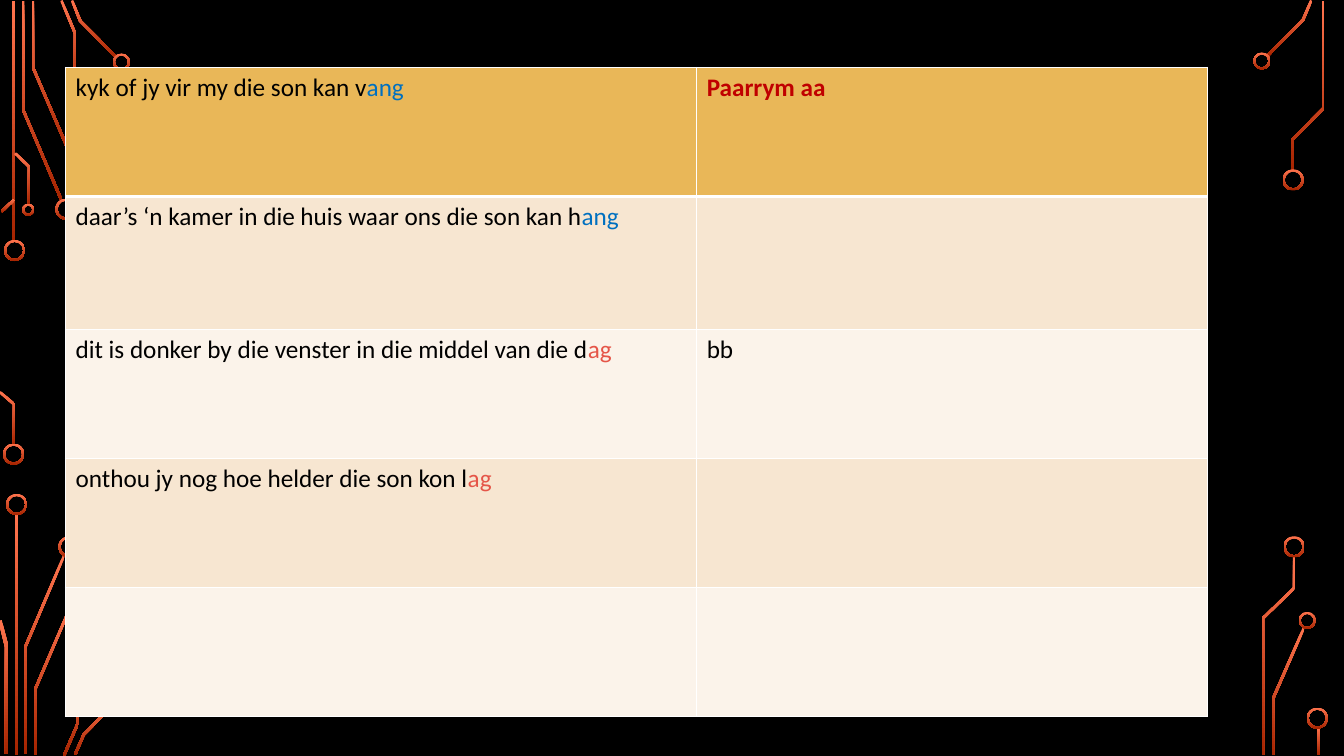
from dataclasses import dataclass
from math import hypot

from lxml.etree import SubElement
from pptx import Presentation
from pptx.dml.color import RGBColor as RGB
from pptx.enum.shapes import MSO_SHAPE as SHAPE
from pptx.oxml.ns import qn
from pptx.util import Inches, Pt

# Grid: every length is a number of columns or rows of this size
COLS, ROWS = 1333, 750
CELL = Inches(0.01)


def grid(n: float) -> int:
    return round(n * CELL)


@dataclass(frozen=True)
class Theme:
    background: str = "000000"
    circuit_top: str = "FF744E"
    circuit_bottom: str = "A62400"
    header: str = "E9B758"
    bands: tuple = ("FBF3EA", "F7E6D1")
    border: str = "FFFFFF"
    text: str = "000000"
    rhyme_a: str = "0070C0"
    rhyme_b: str = "E55548"
    label: str = "C00000"
    font: str = "Calibri"
    size: int = 18
    thin: int = 1
    thick: int = 3


THEME = Theme()


@dataclass(frozen=True)
class Ring:
    x: float
    y: float
    size: float = 21


@dataclass(frozen=True)
class Bar:
    x: float
    y: float
    height: float
    width: float = 3


@dataclass(frozen=True)
class Trace:
    points: tuple
    width: float = 2.5


@dataclass(frozen=True)
class Phrase:
    stem: str = ""
    rhyme: str = ""
    rhyme_colour: str = THEME.text
    colour: str = THEME.text
    bold: bool = False


# Circuit pattern along both edges
BARS = [Bar(12, 1, 239), Bar(15, 510, 239), Bar(1306, 721, 28)]
RINGS = [
    Ring(4, 238), Ring(3, 440), Ring(55, 197), Ring(64, 155), Ring(64, 99),
    Ring(112, 53, 17), Ring(22, 202, 12), Ring(6, 490), Ring(58, 532),
    Ring(67, 574), Ring(67, 630), Ring(115, 680, 17), Ring(1243, 52, 17),
    Ring(1272, 168), Ring(1288, 607, 17), Ring(1273, 532), Ring(1296, 702),
]
TRACES = [
    Trace(((23, 1), (23, 109), (61, 198.5))),
    Trace(((32.5, 1), (32.5, 66.5), (71, 156.5))),
    Trace(((61, 0.5), (74.5, 33), (74.5, 100))),
    Trace(((71.5, 0.5), (79.5, 20.5), (115.5, 57))),
    Trace(((14, 198), (1.5, 210))),
    Trace(((0, 389), (14, 401), (14, 441))),
    Trace(((15, 152), (29, 165.5), (29, 203))),
    Trace(((25.5, 748), (25.5, 641), (63.5, 551.5))),
    Trace(((0, 615.5), (6.5, 641), (6.5, 748)), 3.5),
    Trace(((35.5, 749), (35.5, 682.5), (73.5, 593.5))),
    Trace(((63.5, 749.5), (77.5, 717), (77.5, 650))),
    Trace(((74.5, 748.5), (83, 729), (118, 693))),
    Trace(((1257, 55.5), (1292.5, 19.5), (1300.5, 0.5))),
    Trace(((1262.5, 749), (1262.5, 693.5), (1293, 623.5))),
    Trace(((1282, 169), (1282, 138.5), (1312.5, 107.5), (1312.5, 1))),
    Trace(((1252.5, 749), (1252.5, 613.5), (1283.5, 583.5), (1283.5, 552))),
]

# Poem table
TABLE_LEFT, TABLE_TOP = 65, 67
COL_WIDTHS = (626, 507)
ROW_HEIGHTS = (128, 132, 128, 128, 128)
POEM = [
    (Phrase("kyk of jy vir my die son kan v", "ang", THEME.rhyme_a),
     Phrase("Paarrym aa", colour=THEME.label, bold=True)),
    (Phrase("daar’s ‘n kamer in die huis waar ons die son kan h", "ang", THEME.rhyme_a),
     Phrase()),
    (Phrase("dit is donker by die venster in die middel van die d", "ag", THEME.rhyme_b),
     Phrase("bb")),
    (Phrase("onthou jy nog hoe helder die son kon l", "ag", THEME.rhyme_b), Phrase()),
    (Phrase(), Phrase()),
]


def paint_circuit(sp) -> None:
    sp.shadow.inherit = False
    sp.line.fill.background()
    sp.fill.gradient()
    sp.fill.gradient_angle = 270
    top, bottom = sp.fill.gradient_stops
    top.position, bottom.position = 0, 1
    top.color.rgb = RGB.from_string(THEME.circuit_top)
    bottom.color.rgb = RGB.from_string(THEME.circuit_bottom)


def draw_bar(shapes, bar: Bar) -> None:
    box = map(grid, (bar.x, bar.y, bar.width, bar.height))
    paint_circuit(shapes.add_shape(SHAPE.RECTANGLE, *box))


def draw_ring(shapes, ring: Ring) -> None:
    box = map(grid, (ring.x, ring.y, ring.size, ring.size))
    sp = shapes.add_shape(SHAPE.DONUT, *box)
    sp.adjustments[0] = 2 / ring.size
    paint_circuit(sp)


def trace_side(points: tuple, offset: float) -> list:
    """Shift a polyline sideways, with mitred corners."""
    normals = []
    for (x0, y0), (x1, y1) in zip(points, points[1:]):
        length = hypot(x1 - x0, y1 - y0)
        normals.append(((y0 - y1) / length, (x1 - x0) / length))
    before, after = normals[:1] + normals, normals + normals[-1:]
    side = []
    for (x, y), (ax, ay), (bx, by) in zip(points, before, after):
        k = offset / (1 + ax * bx + ay * by)
        side.append((grid(x + k * (ax + bx)), grid(y + k * (ay + by))))
    return side


def draw_trace(shapes, trace: Trace) -> None:
    half = trace.width / 2
    outline = trace_side(trace.points, half) + trace_side(trace.points, -half)[::-1]
    builder = shapes.build_freeform(*outline[0])
    builder.add_line_segments(outline[1:], close=True)
    paint_circuit(builder.convert_to_shape())


def set_borders(cell, top: int, bottom: int) -> None:
    tc_pr = cell._tc.get_or_add_tcPr()
    widths = {"lnL": THEME.thin, "lnR": THEME.thin, "lnT": top, "lnB": bottom}
    for i, (tag, width) in enumerate(widths.items()):
        ln = SubElement(tc_pr, qn(f"a:{tag}"), w=str(Pt(width)))
        fill = SubElement(ln, qn("a:solidFill"))
        SubElement(fill, qn("a:srgbClr"), val=THEME.border)
        tc_pr.insert(i, ln)


def format_run(r, colour: str, bold: bool) -> None:
    r.font.name, r.font.size, r.font.bold = THEME.font, Pt(THEME.size), bold
    r.font.color.rgb = RGB.from_string(colour)


def write_phrase(cell, phrase: Phrase) -> None:
    p = cell.text_frame.paragraphs[0]
    p.font.size = Pt(THEME.size)
    p.text = phrase.stem
    for r in p.runs:
        format_run(r, phrase.colour, phrase.bold)
    if phrase.rhyme:
        r = p.add_run()
        r.text = phrase.rhyme
        format_run(r, phrase.rhyme_colour, phrase.bold)


def draw_poem(shapes) -> None:
    box = map(grid, (TABLE_LEFT, TABLE_TOP, sum(COL_WIDTHS), sum(ROW_HEIGHTS)))
    table = shapes.add_table(len(ROW_HEIGHTS), len(COL_WIDTHS), *box).table
    for column, width in zip(table.columns, COL_WIDTHS):
        column.width = grid(width)
    for i, (row, height) in enumerate(zip(table.rows, ROW_HEIGHTS)):
        row.height = grid(height)
        colour = THEME.bands[i % 2] if i else THEME.header
        for cell, phrase in zip(row.cells, POEM[i]):
            cell.fill.solid()
            cell.fill.fore_color.rgb = RGB.from_string(colour)
            set_borders(cell, top=THEME.thick if i == 1 else THEME.thin,
                        bottom=THEME.thick if i == 0 else THEME.thin)
            write_phrase(cell, phrase)


def main() -> None:
    prs = Presentation()
    prs.slide_width, prs.slide_height = grid(COLS), grid(ROWS)
    s = prs.slides.add_slide(prs.slide_layouts[6])
    s.background.fill.solid()
    s.background.fill.fore_color.rgb = RGB.from_string(THEME.background)
    for draw, parts in ((draw_bar, BARS), (draw_trace, TRACES), (draw_ring, RINGS)):
        for part in parts:
            draw(s.shapes, part)
    draw_poem(s.shapes)
    prs.save("out.pptx")


if __name__ == "__main__":
    main()
